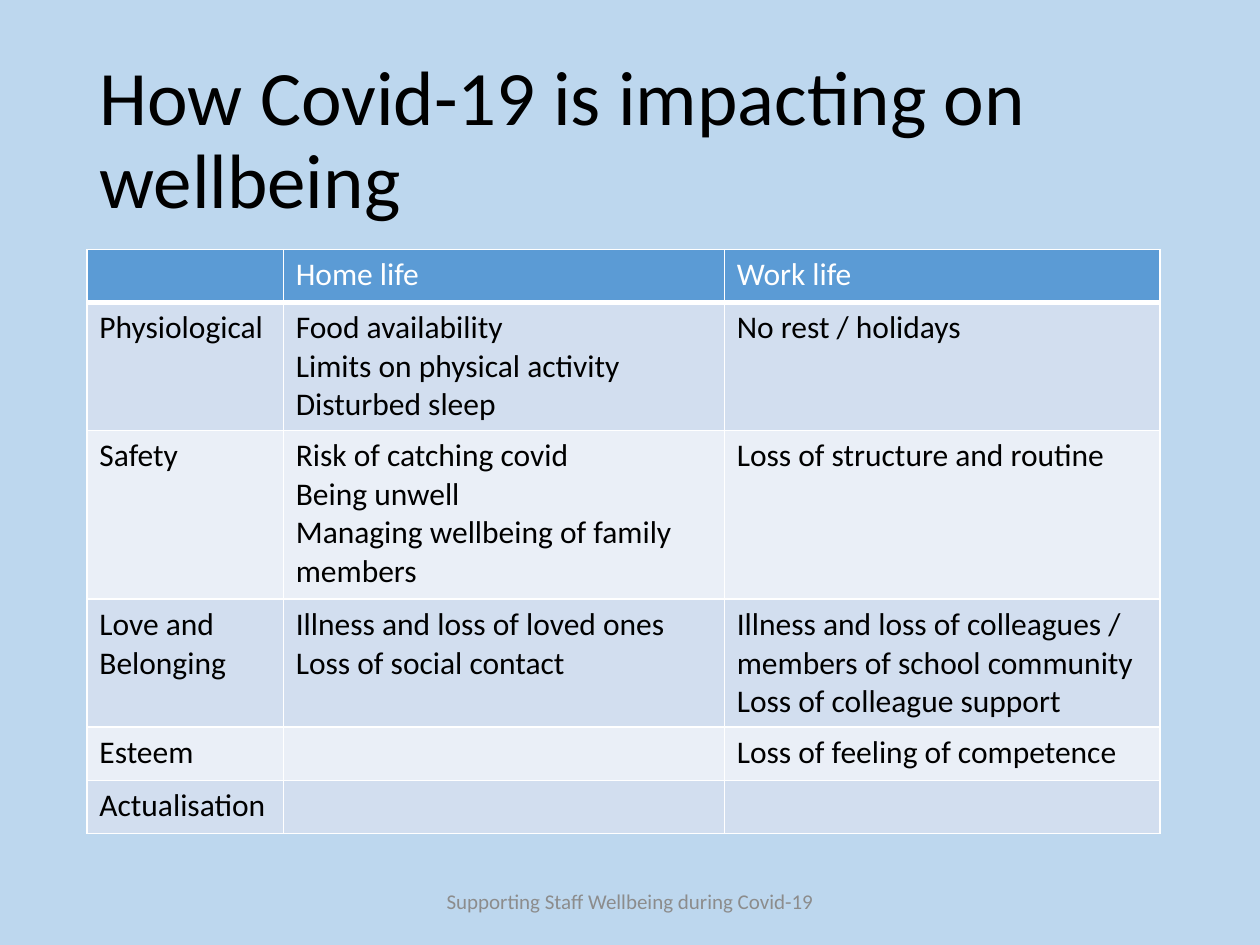
from dataclasses import dataclass

from lxml import etree
from pptx import Presentation
from pptx import util as u
from pptx.dml.color import RGBColor
from pptx.enum import text
from pptx.oxml.ns import qn


@dataclass(frozen=True)
class Theme:
    font: str = "Calibri"
    background: str = "BDD7EE"
    ink: str = "000000"
    muted: str = "8C8C8C"
    white: str = "FFFFFF"
    header: str = "5B9BD5"
    bands: tuple = ("D2DEEF", "EAEFF7")
    title_size: int = 44
    table_size: int = 18
    footer_size: int = 12
    border: int = 1
    header_rule: int = 3


THEME = Theme()

TITLE_BOX = (1.75, 1.02, 21.9, 3.68)
TABLE_BOX = (1.75, 5.03, 21.64, 11.78)
FOOTER_BOX = (8.41, 17.65, 8.58, 1.02)

COLUMN_WIDTHS = (3.96, 8.89, 8.79)
ROW_HEIGHTS = (1.07, 2.58, 3.4, 2.58, 1.07, 1.07)

IMPACTS = [
    ("", "Home life", "Work life"),
    ("Physiological",
     "Food availability\nLimits on physical activity\nDisturbed sleep",
     "No rest / holidays"),
    ("Safety",
     "Risk of catching covid\nBeing unwell\nManaging wellbeing of family members",
     "Loss of structure and routine"),
    ("Love and Belonging",
     "Illness and loss of loved ones\nLoss of social contact",
     "Illness and loss of colleagues / members of school community\n"
     "Loss of colleague support"),
    ("Esteem", "", "Loss of feeling of competence"),
    ("Actualisation", "", ""),
]


def apply(target, formats):
    for name, value in formats.items():
        setattr(target, name, value)


def write(frame, wording, size, color, **paragraph_formats):
    frame.text = wording
    for paragraph in frame.paragraphs:
        apply(paragraph, paragraph_formats)
        for run in paragraph.runs:
            apply(run.font, {"name": THEME.font, "size": u.Pt(size), "bold": False})
            run.font.color.rgb = RGBColor.from_string(color)


def place(part, box):
    names = ("left", "top", "width", "height")
    apply(part, dict(zip(names, map(u.Cm, box))))


def outline(cell, widths):
    properties = cell._tc.get_or_add_tcPr()
    for index, (side, width) in enumerate(widths.items()):
        line = etree.Element(qn(f"a:ln{side}"), w=str(u.Pt(width)))
        fill = etree.SubElement(line, qn("a:solidFill"))
        etree.SubElement(fill, qn("a:srgbClr"), val=THEME.white)
        properties.insert(index, line)


def add_title(slide, box):
    title = slide.shapes.title
    place(title, box)
    apply(title.text_frame, {
        "word_wrap": True,
        "auto_size": text.MSO_AUTO_SIZE.NONE,
        "vertical_anchor": text.MSO_ANCHOR.MIDDLE,
    })
    write(title.text_frame, "How Covid-19 is impacting on wellbeing",
          THEME.title_size, THEME.ink,
          alignment=text.PP_ALIGN.LEFT, line_spacing=0.9)


def add_impact_table(slide, box):
    table = slide.shapes.add_table(
        len(ROW_HEIGHTS), len(COLUMN_WIDTHS), *map(u.Cm, box)).table
    for column, width in zip(table.columns, COLUMN_WIDTHS):
        column.width = u.Cm(width)
    for row, height in zip(table.rows, ROW_HEIGHTS):
        row.height = u.Cm(height)
    for r, entries in enumerate(IMPACTS):
        is_header = r == 0
        band = THEME.header if is_header else THEME.bands[(r - 1) % 2]
        borders = dict.fromkeys("LRTB", THEME.border)
        if is_header:
            borders["B"] = THEME.header_rule
        for c, wording in enumerate(entries):
            cell = table.cell(r, c)
            cell.fill.solid()
            cell.fill.fore_color.rgb = RGBColor.from_string(band)
            outline(cell, borders)
            write(cell.text_frame, wording, THEME.table_size,
                  THEME.white if is_header else THEME.ink)


def add_footer(slide, box):
    frame = slide.shapes.add_textbox(*map(u.Cm, box)).text_frame
    apply(frame, {"word_wrap": True, "vertical_anchor": text.MSO_ANCHOR.MIDDLE})
    write(frame, "Supporting Staff Wellbeing during Covid-19",
          THEME.footer_size, THEME.muted, alignment=text.PP_ALIGN.CENTER)


def main():
    deck = Presentation()
    apply(deck, {"slide_width": u.Cm(25.4), "slide_height": u.Cm(19.05)})
    slide = deck.slides.add_slide(deck.slide_layouts.get_by_name("Title Only"))
    slide.background.fill.solid()
    slide.background.fill.fore_color.rgb = RGBColor.from_string(THEME.background)
    add_title(slide, TITLE_BOX)
    add_impact_table(slide, TABLE_BOX)
    add_footer(slide, FOOTER_BOX)
    deck.save("out.pptx")


if __name__ == "__main__":
    main()
